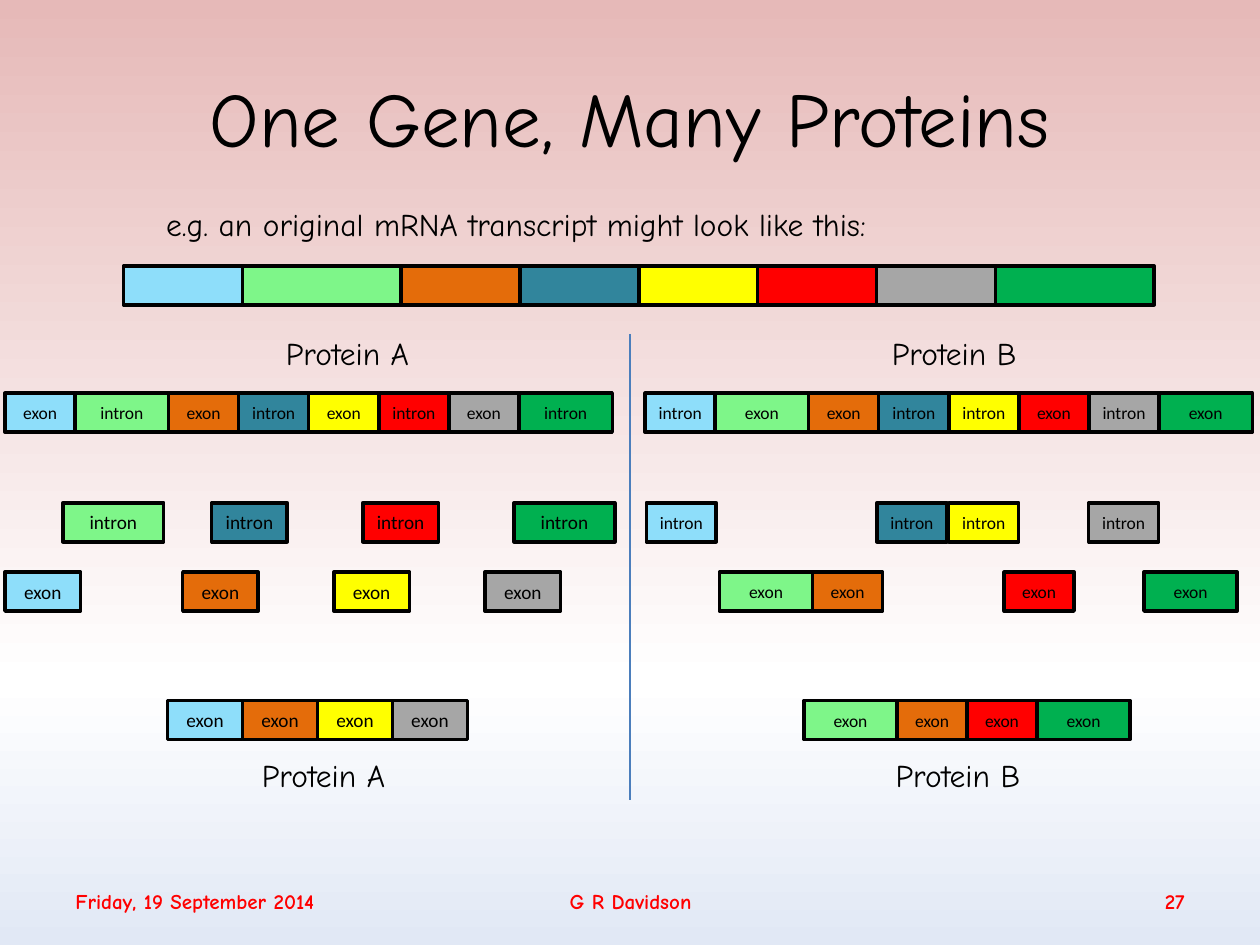
from copy import deepcopy

from lxml.etree import SubElement
from pptx import Presentation
from pptx.dml.color import RGBColor
from pptx.enum.shapes import MSO_CONNECTOR, MSO_SHAPE
from pptx.enum.text import MSO_ANCHOR, PP_ALIGN
from pptx.oxml.ns import qn
from pptx.util import Inches, Pt

COLORS = {
    "sky": "8EDEFA", "lime": "7EF689", "orange": "E46C0A", "teal": "31859C",
    "yellow": "FFFF00", "red": "FF0000", "gray": "A6A6A6", "green": "00B050",
    "black": "000000", "divider": "4B7EBC",
    "bg_top": "E6B9B8", "bg_middle": "FFFFFF", "bg_bottom": "E1E8F5",
}
GENE = ["sky", "lime", "orange", "teal", "yellow", "red", "gray", "green"]
# Relative segment lengths
WEIGHTS = {name: 4 if name in ("lime", "green") else 3 for name in GENE}
SEGMENT_HEIGHT = 0.31
HEADING_FONT = "Comic Neue"
LABEL_FONT = "Calibri"

# Lefts are measured from the left edge of the protein's panel
PROTEINS = [
    {"name": "Protein A", "size": 11, "unit": 0.2,
     "strip": (0.04, 4.82), "spliced": (1.33, 2.38),
     "introns": {"lime": 0.5, "teal": 1.68, "red": 2.88, "green": 4.08},
     "exons": {"sky": 0.04, "orange": 1.45, "yellow": 2.65, "gray": 3.85},
     "captions": (2.17, 1.98)},
    {"name": "Protein B", "size": 10, "unit": 0.185,
     "strip": (0.12, 4.82), "spliced": (1.38, 2.59),
     "introns": {"sky": 0.13, "teal": 1.96, "yellow": 2.53, "gray": 3.64},
     "exons": {"lime": 0.71, "orange": 1.45, "red": 2.97, "green": 4.08},
     "captions": (1.98, 2.01)},
]


def color(name):
    return RGBColor.from_string(COLORS[name])


def style_paragraph(paragraph, text, size, font=HEADING_FONT, fill="black",
                    align=PP_ALIGN.LEFT, bold=False):
    paragraph.text = text
    paragraph.alignment = align
    paragraph.font.size = Pt(size)
    paragraph.font.name = font
    paragraph.font.bold = bold
    paragraph.font.color.rgb = color(fill)


def add_text(slide, box, text, size, anchor=MSO_ANCHOR.TOP, wrap=True, **style):
    shape = slide.shapes.add_textbox(*map(Inches, box))
    shape.text_frame.word_wrap = wrap
    shape.text_frame.vertical_anchor = anchor
    style_paragraph(shape.text_frame.paragraphs[0], text, size, **style)


def add_segment(slide, left, top, width, name, label="", size=10):
    shape = slide.shapes.add_shape(
        MSO_SHAPE.RECTANGLE, Inches(left), Inches(top),
        Inches(width), Inches(SEGMENT_HEIGHT))
    shape.shadow.inherit = False
    shape.fill.solid()
    shape.fill.fore_color.rgb = color(name)
    shape.line.color.rgb = color("black")
    shape.line.width = Pt(2)
    if label:
        frame = shape.text_frame
        frame.margin_left = frame.margin_right = 0
        frame.vertical_anchor = MSO_ANCHOR.MIDDLE
        style_paragraph(frame.paragraphs[0], label, size, LABEL_FONT,
                        align=PP_ALIGN.CENTER)


def add_strip(slide, left, top, width, names, labels=None, size=10):
    """Adjoining segments that share the width by weight."""
    unit = width / sum(WEIGHTS[name] for name in names)
    for name in names:
        segment_width = unit * WEIGHTS[name]
        label = labels[name] if labels else ""
        add_segment(slide, left, top, segment_width, name, label, size)
        left += segment_width


def add_background(slide):
    fill = slide.background.fill
    fill.gradient()
    fill.gradient_angle = 270
    stop_list = slide.background._cSld.find(".//" + qn("a:gsLst"))
    stop_list.append(deepcopy(stop_list[-1]))
    stops = [(0, "bg_top"), (0.72, "bg_middle"), (1, "bg_bottom")]
    for stop, (position, name) in zip(fill.gradient_stops, stops):
        stop.position = position
        stop.color.rgb = color(name)


def add_header(slide, left, top, width):
    add_text(slide, (left, top, width, 1.25), "One Gene, Many Proteins", 44,
             MSO_ANCHOR.MIDDLE, align=PP_ALIGN.CENTER)
    add_text(slide, (left + 0.72, top + 1.28, 6.34, 0.4),
             "e.g. an original mRNA transcript might look like this:", 18,
             wrap=False)
    add_strip(slide, left + 0.48, top + 1.81, 8.18, GENE)


def add_protein(slide, left, top, protein):
    exons, introns = protein["exons"], protein["introns"]
    labels = {name: "exon" if name in exons else "intron" for name in GENE}
    size = protein["size"]

    # Captions above and below
    for offset, caption_left in zip((0, 3.35), protein["captions"]):
        add_text(slide, (left + caption_left, top + offset, 1.3, 0.4),
                 protein["name"], 18, wrap=False)

    # Whole transcript
    strip_left, strip_width = protein["strip"]
    add_strip(slide, left + strip_left, top + 0.52, strip_width, GENE, labels)

    # Introns and exons cut apart
    for offset, row in ((1.39, introns), (1.94, exons)):
        for name, segment_left in row.items():
            add_segment(slide, left + segment_left, top + offset,
                        protein["unit"] * WEIGHTS[name], name,
                        labels[name], size)

    # Exons joined together
    strip_left, strip_width = protein["spliced"]
    add_strip(slide, left + strip_left, top + 2.96, strip_width, list(exons),
              labels, size)


def add_divider(slide, left, top, height):
    line = slide.shapes.add_connector(
        MSO_CONNECTOR.STRAIGHT, Inches(left), Inches(top),
        Inches(left), Inches(top + height))
    line.line.color.rgb = color("divider")
    line.line.width = Pt(0.75)
    SubElement(line._element.spPr, qn("a:effectLst"))


def add_footer(slide, left, top):
    parts = [
        (0, 3.32, "Friday, 19 September 2014", PP_ALIGN.LEFT),
        (2.92, 3.17, "G R Davidson", PP_ALIGN.CENTER),
        (6.67, 2.33, "27", PP_ALIGN.RIGHT),
    ]
    for offset, width, text, align in parts:
        add_text(slide, (left + offset, top, width, 0.4), text, 12,
                 MSO_ANCHOR.MIDDLE, fill="red", align=align, bold=True)


def main():
    presentation = Presentation()
    presentation.slide_width = Inches(10)
    presentation.slide_height = Inches(7.5)
    slide = presentation.slides.add_slide(presentation.slide_layouts[6])
    add_background(slide)
    add_header(slide, 0.5, 0.3, 9)
    for index, protein in enumerate(PROTEINS):
        add_protein(slide, 5 * index, 2.6, protein)
    add_divider(slide, 5, 2.65, 3.7)
    add_footer(slide, 0.5, 6.95)
    presentation.save("out.pptx")


if __name__ == "__main__":
    main()
